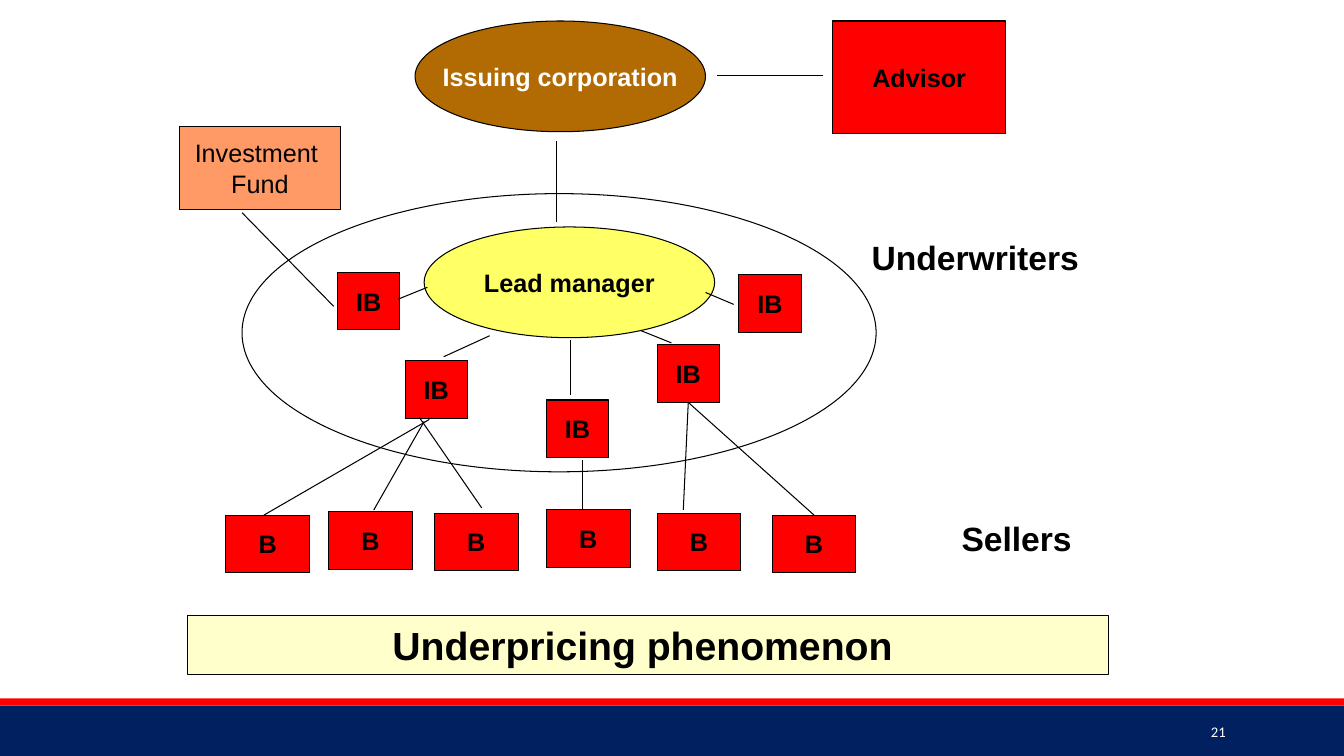
from lxml import etree
from pptx import Presentation
from pptx.dml.color import RGBColor
from pptx.enum.shapes import MSO_CONNECTOR, MSO_SHAPE
from pptx.enum.text import MSO_ANCHOR, PP_ALIGN
from pptx.oxml.ns import qn
from pptx.util import Cm, Pt

BLACK = RGBColor(0x00, 0x00, 0x00)
WHITE = RGBColor(0xFF, 0xFF, 0xFF)
RED = RGBColor(0xFF, 0x00, 0x00)
NAVY = RGBColor(0x00, 0x20, 0x60)
BROWN = RGBColor(0xB2, 0x6B, 0x02)
YELLOW = RGBColor(0xFF, 0xFF, 0x66)
ORANGE = RGBColor(0xFF, 0x99, 0x66)
CREAM = RGBColor(0xFF, 0xFF, 0xCC)

SLIDE_W, SLIDE_H = 33.87, 19.05
OUTLINE = Pt(0.75)

# All positions are (left, top, width, height) in centimetres.
FOOTER_BANDS = [((0, 17.78, SLIDE_W, 1.27), NAVY), ((0, 17.6, SLIDE_W, 0.18), RED)]

# text, place, fill, font colour, size, bold
OVALS = [
    ("", (6.1, 4.88, 15.98, 7.01), None, BLACK, 18, True),
    ("Issuing corporation", (10.46, 0.53, 7.32, 2.79), BROWN, WHITE, 18, True),
    ("Lead manager", (10.69, 5.72, 7.32, 2.79), YELLOW, BLACK, 18, True),
]
BOXES = [
    ("Advisor", (20.98, 0.53, 4.37, 2.84), RED, BLACK, 18, True),
    ("Investment \nFund", (4.52, 3.18, 4.06, 2.11), ORANGE, BLACK, 18, False),
    ("Underpricing phenomenon ", (4.72, 15.52, 23.22, 1.47), CREAM, BLACK, 28, True),
]

BANK_SIZE = (1.57, 1.45)
BANKS = [(8.51, 6.86), (10.21, 9.09), (13.77, 10.08), (16.56, 8.69), (18.62, 6.93)]
SELLER_SIZE = (2.11, 1.45)
SELLERS = [(5.69, 12.98), (8.28, 12.9), (10.95, 12.93),
           (13.77, 12.85), (16.56, 12.93), (19.46, 12.98)]

# text, place, size, bold, font, colour, alignment
LABELS = [
    ("Underwriters", (21.34, 5.84, 6.48, 1.27), 24, True, "Arial", BLACK, PP_ALIGN.CENTER),
    ("Sellers", (22.38, 12.93, 6.48, 1.27), 24, True, "Arial", BLACK, PP_ALIGN.CENTER),
    ("21", (27.51, 17.93, 3.63, 1.02), 10.5, False, "Calibri", WHITE, PP_ALIGN.RIGHT),
]

# start x, start y, end x, end y
LINKS = [
    (18.08, 1.91, 20.73, 1.91),    # issuer - advisor
    (14.02, 3.56, 14.02, 5.59),    # issuer - lead manager
    (8.41, 7.72, 6.1, 5.36),       # first bank - investment fund
    (10.77, 7.24, 10.03, 7.54),    # lead manager - banks
    (12.34, 8.46, 11.18, 8.99),
    (14.38, 8.56, 14.38, 9.96),
    (16.15, 8.33, 16.92, 8.64),
    (17.78, 7.37, 18.49, 7.67),
    (10.82, 10.57, 6.65, 12.98),   # banks - sellers
    (10.69, 10.62, 9.42, 12.85),
    (10.57, 10.52, 12.14, 12.8),
    (14.68, 11.58, 14.68, 12.85),
]
FOURTH_BANK_LINKS = [(17.3, 10.08, 17.22, 12.85), (17.3, 10.08, 20.37, 12.98)]


def write(frame, text, size, bold, font, color, align):
    frame.text = text
    frame.vertical_anchor = MSO_ANCHOR.MIDDLE
    for paragraph in frame.paragraphs:
        paragraph.alignment = align
        paragraph.font.name = font
        paragraph.font.size = Pt(size)
        paragraph.font.bold = bold
        paragraph.font.color.rgb = color


def add_block(slide, kind, place, fill, outlined=True):
    block = slide.shapes.add_shape(kind, *map(Cm, place))
    block.shadow.inherit = False
    if fill is None:
        block.fill.background()
    else:
        block.fill.solid()
        block.fill.fore_color.rgb = fill
    if outlined:
        block.line.color.rgb = BLACK
        block.line.width = OUTLINE
    else:
        block.line.fill.background()
    return block


def add_node(slide, kind, text, place, fill, color, size, bold):
    node = add_block(slide, kind, place, fill)
    if text:
        node.text_frame.word_wrap = False
        write(node.text_frame, text, size, bold, "Arial", color, PP_ALIGN.CENTER)
    return node


def add_row(slide, text, corners, size):
    """Add one equal red box for each top-left corner."""
    return [add_node(slide, MSO_SHAPE.RECTANGLE, text, corner + size, RED, BLACK, 18, True)
            for corner in corners]


def add_link(slide, ends):
    link = slide.shapes.add_connector(MSO_CONNECTOR.STRAIGHT, *map(Cm, ends))
    link.line.color.rgb = BLACK
    link.line.width = OUTLINE
    etree.SubElement(link._element.spPr, qn("a:effectLst"))
    return link


def main():
    prs = Presentation()
    prs.slide_width, prs.slide_height = Cm(SLIDE_W), Cm(SLIDE_H)
    slide = prs.slides.add_slide(prs.slide_layouts[6])

    for place, fill in FOOTER_BANDS:
        add_block(slide, MSO_SHAPE.RECTANGLE, place, fill, outlined=False)
    for oval in OVALS:
        add_node(slide, MSO_SHAPE.OVAL, *oval)
    for box in BOXES:
        add_node(slide, MSO_SHAPE.RECTANGLE, *box)
    banks = add_row(slide, "IB", BANKS, BANK_SIZE)
    sellers = add_row(slide, "B", SELLERS, SELLER_SIZE)

    for text, place, *style in LABELS:
        frame = slide.shapes.add_textbox(*map(Cm, place)).text_frame
        frame.word_wrap = True
        write(frame, text, *style)

    for ends in LINKS:
        add_link(slide, ends)
    fourth_bank_links = [add_link(slide, ends) for ends in FOURTH_BANK_LINKS]
    for link in fourth_bank_links:
        link.begin_connect(banks[3], 2)
    fourth_bank_links[-1].end_connect(sellers[-1], 0)

    prs.save("out.pptx")


if __name__ == "__main__":
    main()
